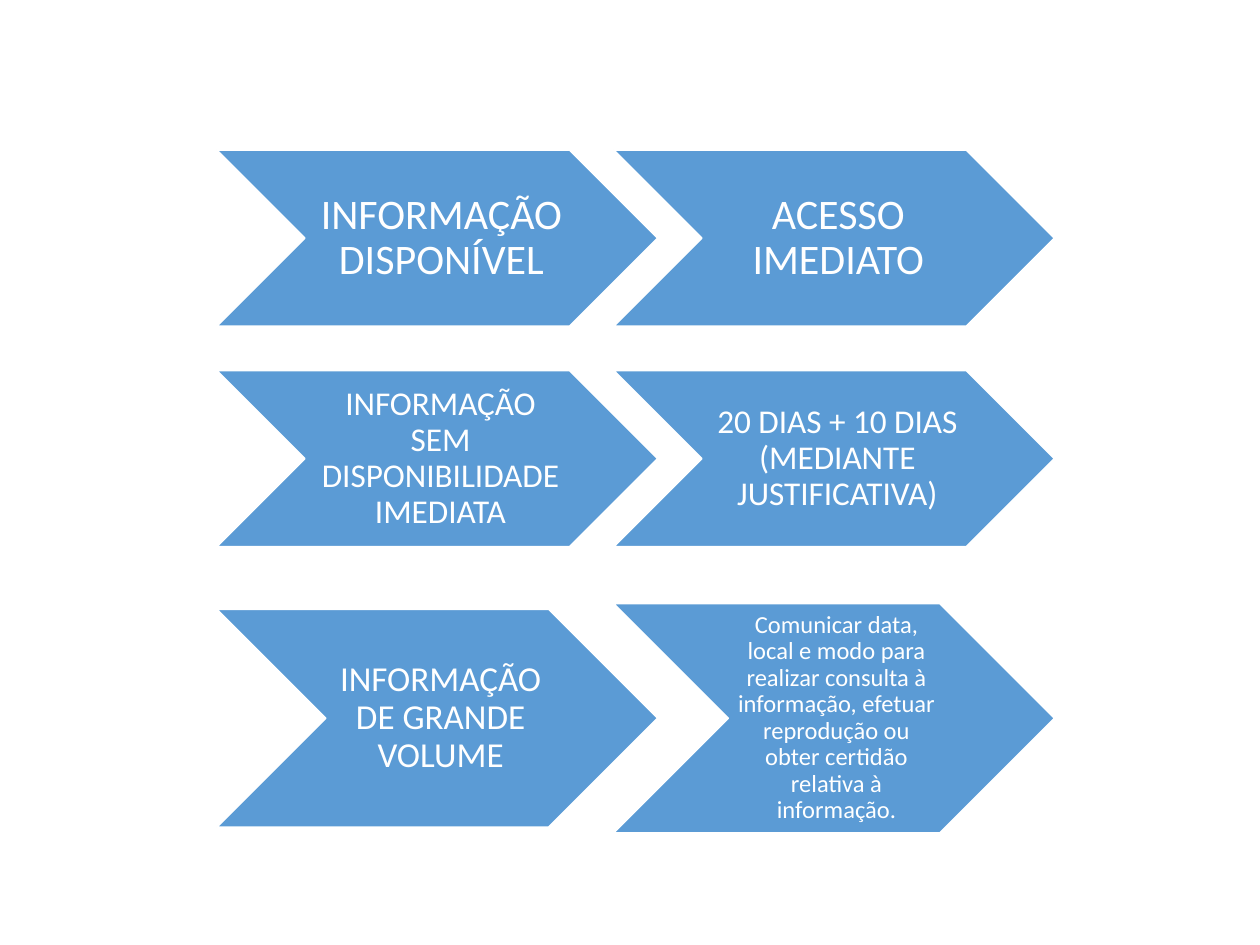
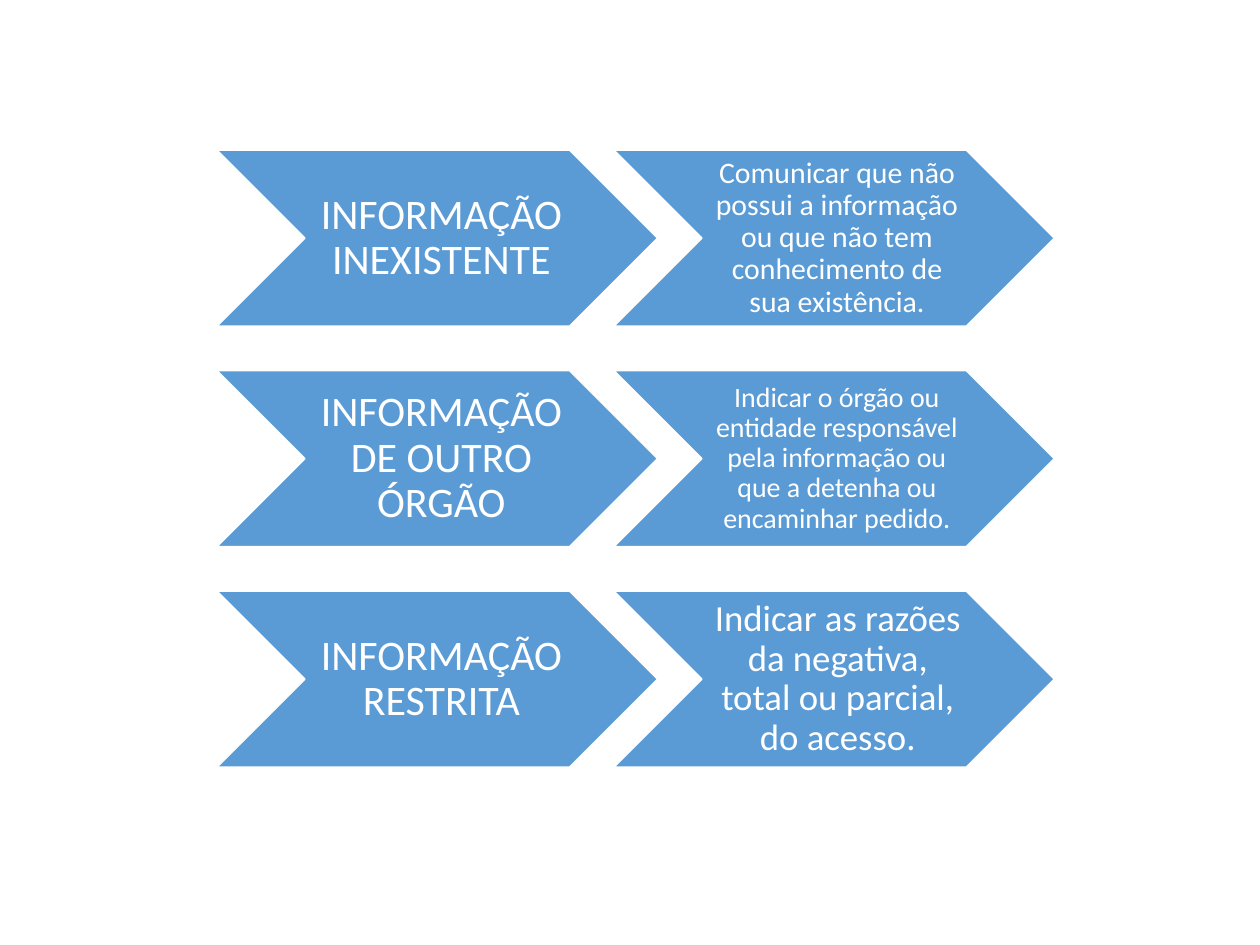
from dataclasses import dataclass

from pptx import Presentation
from pptx.dml.color import RGBColor
from pptx.enum import shapes, text
from pptx.util import Inches, Pt

BLUE = "5B9BD5"
WHITE = "FFFFFF"
FONT = "Calibri"

# Chevron grid, in inches
LEFT, TOP = 1.72, 1.19
WIDTH, HEIGHT = 3.5, 1.4
STEP_X, STEP_Y = 3.15, 1.75


@dataclass
class Step:
    words: str
    size: int
    height: float = HEIGHT
    drop: float = 0  # extra distance below the regular row centre


SLIDES = [
    [
        (Step("INFORMAÇÃO DISPONÍVEL", 24), Step("ACESSO IMEDIATO", 24)),
        (Step("INFORMAÇÃO SEM DISPONIBILIDADE IMEDIATA", 19),
         Step("20 DIAS + 10 DIAS (MEDIANTE JUSTIFICATIVA)", 19)),
        (Step("INFORMAÇÃO DE GRANDE VOLUME", 20, 1.73, 0.31),
         Step("Comunicar data, local e modo para realizar consulta à "
              "informação, efetuar reprodução ou obter certidão "
              "relativa à informação.", 14, 1.82, 0.31)),
    ],
    [
        (Step("INFORMAÇÃO INEXISTENTE", 24),
         Step("Comunicar que não possui a informação ou que não tem "
              "conhecimento de sua existência.", 17)),
        (Step("INFORMAÇÃO DE OUTRO ÓRGÃO", 24),
         Step("Indicar o órgão ou entidade responsável pela informação "
              "ou que a detenha ou encaminhar pedido.", 16)),
        (Step("INFORMAÇÃO RESTRITA", 24),
         Step("Indicar as razões da negativa, total ou parcial, "
              "do acesso.", 21)),
    ],
]


def color(code: str) -> RGBColor:
    return RGBColor.from_string(code)


def draw(slide, step: Step, row: int, col: int) -> None:
    middle = TOP + HEIGHT / 2 + row * STEP_Y + step.drop
    arrow = slide.shapes.add_shape(
        shapes.MSO_SHAPE.CHEVRON,
        Inches(LEFT + col * STEP_X), Inches(middle - step.height / 2),
        Inches(WIDTH), Inches(step.height))
    arrow.shadow.inherit = False
    arrow.fill.solid()
    arrow.fill.fore_color.rgb = color(BLUE)
    arrow.line.color.rgb = color(WHITE)
    arrow.line.width = Pt(1)

    # Margins grow with the text size
    frame = arrow.text_frame
    frame.word_wrap = True
    frame.vertical_anchor = text.MSO_ANCHOR.MIDDLE
    frame.margin_left = Pt(0.3 * step.size)
    frame.margin_top = frame.margin_right = frame.margin_bottom = Pt(0.1 * step.size)

    para = frame.paragraphs[0]
    para.text = step.words
    para.alignment = text.PP_ALIGN.CENTER
    para.line_spacing = 0.9
    para.font.name = FONT
    para.font.size = Pt(step.size)
    para.font.color.rgb = color(WHITE)


def main() -> None:
    deck = Presentation()
    deck.slide_width, deck.slide_height = Inches(10), Inches(7.5)
    blank = deck.slide_layouts[6]
    for rows in SLIDES:
        slide = deck.slides.add_slide(blank)
        for row, pair in enumerate(rows):
            for col, step in enumerate(pair):
                draw(slide, step, row, col)
    deck.save("out.pptx")


if __name__ == "__main__":
    main()
